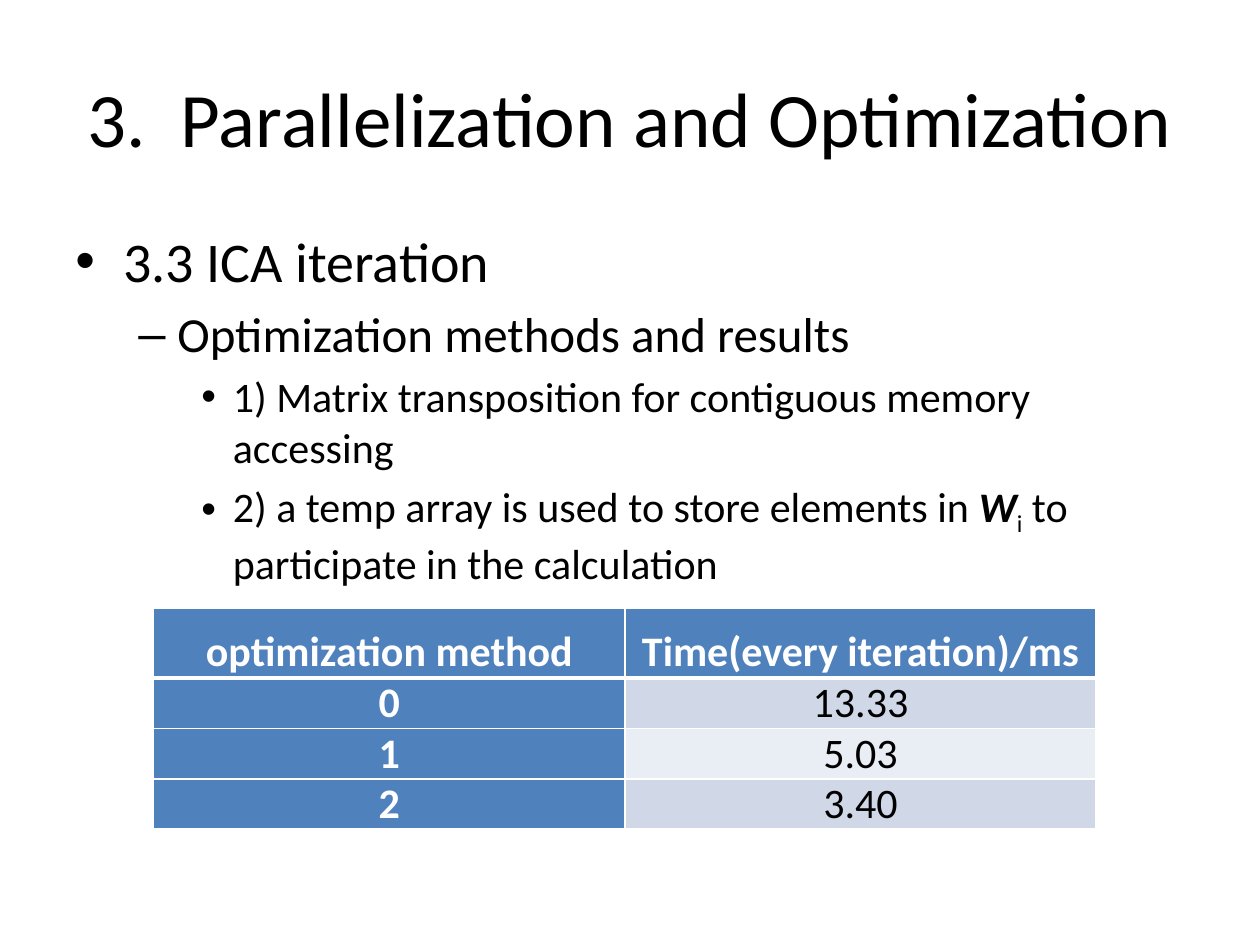
from lxml.etree import SubElement
from pptx import Presentation
from pptx.dml.color import RGBColor
from pptx.enum.text import MSO_ANCHOR as Anchor, PP_ALIGN as Align
from pptx.oxml.ns import qn
from pptx.util import Inches, Pt

WIDTH, HEIGHT = Inches(10), Inches(7.5)
MARGIN = 0.05  # share of the slide width
FONT = "Calibri"
COLORS = {
    "text": "000000",
    "white": "FFFFFF",
    "header": "4F81BD",
    "odd_row": "D0D8E8",
    "even_row": "E9EDF4",
}
# Per outline level: bullet, font size, text indent and hanging indent in inches
LEVELS = [("•", 32, 0.38, 0.38), ("–", 28, 0.81, 0.31), ("•", 24, 1.25, 0.25)]
OUTLINE = [
    (0, ["3.3 ICA iteration"]),
    (1, ["Optimization methods and results"]),
    (2, ["1) Matrix transposition for contiguous memory accessing"]),
    (2, ["2) a temp array is used to store elements in ", "W", "i",
         " to participate in the calculation"]),
]
TIMINGS = [
    ("optimization method", "Time(every iteration)/ms"),
    ("0", "13.33"),
    ("1", "5.03"),
    ("2", "3.40"),
]


def color(name):
    return RGBColor.from_string(COLORS[name])


def format_runs(paragraph, size, color_name="text", bold=False):
    for run in paragraph.runs:
        run.font.name = FONT
        run.font.size = Pt(size)
        run.font.bold = bold
        run.font.color.rgb = color(color_name)


def add_text_frame(slide, top, height):
    """Add a text box between the side margins; top and height are shares of the slide."""
    box = slide.shapes.add_textbox(
        int(WIDTH * MARGIN), int(HEIGHT * top),
        int(WIDTH * (1 - 2 * MARGIN)), int(HEIGHT * height))
    box.text_frame.word_wrap = True
    return box.text_frame


def add_title(slide, text):
    frame = add_text_frame(slide, 0.04, 1 / 6)
    frame.vertical_anchor = Anchor.MIDDLE
    frame.text = text
    paragraph = frame.paragraphs[0]
    paragraph.alignment = Align.CENTER
    format_runs(paragraph, 44)


def set_bullet(paragraph, bullet, indent, hanging):
    properties = paragraph._p.get_or_add_pPr()
    properties.set("marL", str(Inches(indent)))
    properties.set("indent", str(-Inches(hanging)))
    SubElement(properties, qn("a:buFont"), typeface="Arial")
    SubElement(properties, qn("a:buChar"), char=bullet)


def add_outline(slide, items):
    frame = add_text_frame(slide, 0.7 / 3, 0.66)
    for index, (level, texts) in enumerate(items):
        paragraph = frame.add_paragraph() if index else frame.paragraphs[0]
        bullet, size, indent, hanging = LEVELS[level]
        paragraph.level = level
        paragraph.space_before = Pt(0.2 * size)
        set_bullet(paragraph, bullet, indent, hanging)
        for text in texts:
            paragraph.add_run().text = text
        format_runs(paragraph, size)
    _, symbol, subscript, _ = paragraph.runs
    symbol.font.bold = symbol.font.italic = True
    subscript._r.get_or_add_rPr().set("baseline", "-25000")


def set_borders(cell, widths):
    """Draw white borders; widths are points for left, right, top and bottom."""
    properties = cell._tc.get_or_add_tcPr()
    for position, (side, width) in enumerate(zip("LRTB", widths)):
        line = properties.makeelement(qn(f"a:ln{side}"), {"w": str(Pt(width))})
        fill = SubElement(line, qn("a:solidFill"))
        SubElement(fill, qn("a:srgbClr"), val=COLORS["white"])
        properties.insert(position, line)


def format_cell(cell, row, column):
    heading = row == 0 or column == 0
    band = "odd_row" if row % 2 else "even_row"
    cell.fill.solid()
    cell.fill.fore_color.rgb = color("header" if heading else band)
    cell.vertical_anchor = Anchor.BOTTOM
    cell.margin_left = cell.margin_right = Inches(0.07)
    cell.margin_top = cell.margin_bottom = 0
    paragraph = cell.text_frame.paragraphs[0]
    paragraph.alignment = Align.CENTER
    format_runs(paragraph, 24, "white" if heading else "text", heading)
    set_borders(cell, (1, 1, 3 if row == 1 else 1, 3 if row == 0 else 1))


def add_timing_table(slide, rows):
    column_width, header_height, row_height = Inches(3.74), Inches(0.55), Inches(0.37)
    columns = len(rows[0])
    table = slide.shapes.add_table(
        len(rows), columns, Inches(1.22), Inches(4.83), column_width * columns,
        header_height + row_height * (len(rows) - 1)).table
    for column in table.columns:
        column.width = column_width
    for row_index, values in enumerate(rows):
        table.rows[row_index].height = row_height if row_index else header_height
        for column_index, value in enumerate(values):
            cell = table.cell(row_index, column_index)
            cell.text = value
            format_cell(cell, row_index, column_index)


def main():
    presentation = Presentation()
    presentation.slide_width, presentation.slide_height = WIDTH, HEIGHT
    slide = presentation.slides.add_slide(presentation.slide_layouts[6])
    add_title(slide, "3.  Parallelization and Optimization")
    add_outline(slide, OUTLINE)
    add_timing_table(slide, TIMINGS)
    presentation.save("out.pptx")


if __name__ == "__main__":
    main()
